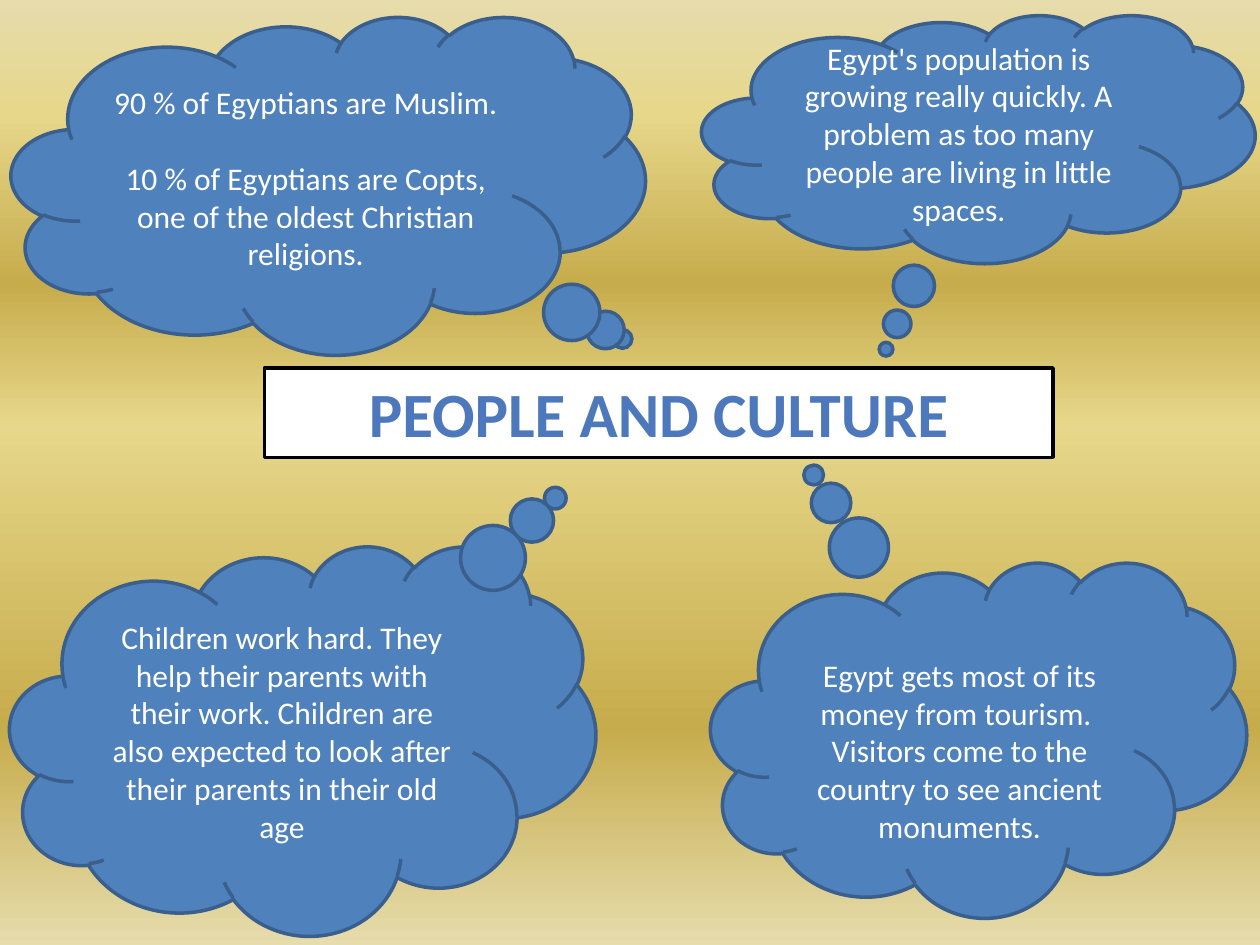
from lxml import etree
from pptx import Presentation
from pptx.dml.color import RGBColor
from pptx.enum.shapes import MSO_SHAPE
from pptx.enum.text import MSO_ANCHOR, MSO_AUTO_SIZE, PP_ALIGN
from pptx.oxml.ns import qn
from pptx.util import Cm, Pt

CLOUD = MSO_SHAPE.CLOUD_CALLOUT
RECTANGLE = MSO_SHAPE.RECTANGLE
MIDDLE = MSO_ANCHOR.MIDDLE
TOP = MSO_ANCHOR.TOP
GROW = MSO_AUTO_SIZE.SHAPE_TO_FIT_TEXT
FIXED = MSO_AUTO_SIZE.NONE
CENTER = PP_ALIGN.CENTER

BLUE = RGBColor(0x4F, 0x81, 0xBD)
DARK_BLUE = RGBColor(0x3A, 0x5F, 0x8C)
WHITE = RGBColor(0xFF, 0xFF, 0xFF)
BLACK = RGBColor(0x00, 0x00, 0x00)
PALE_SAND = RGBColor(0xE6, 0xDC, 0xAC)
SAND = RGBColor(0xE6, 0xD7, 0x8A)
GOLD = RGBColor(0xC7, 0xAC, 0x4C)

GOLD_STOPS = [(0, PALE_SAND), (12, SAND), (30, GOLD), (45, SAND), (77, GOLD), (100, PALE_SAND)]
TITLE_STOPS = [
    (0, RGBColor(0x74, 0x94, 0xC9)),
    (49, RGBColor(0x4D, 0x79, 0xBC)),
    (50, RGBColor(0x34, 0x6A, 0xAA)),
    (92, RGBColor(0x32, 0x5F, 0x94)),
    (100, RGBColor(0x31, 0x5D, 0x91)),
]

CLOUD_FONT = {"name": "Calibri", "size": Pt(18)}
TITLE_FONT = {"name": "Calibri", "size": Pt(36), "bold": True}
LINE_GAP = Pt(22)
LOWERED_INSET = Cm(0.89)

# box (left, top, width, height in cm), tail position, paragraphs, frame format, paragraph gap
CLOUDS = [
    ((14.33, 11.33, 10.8, 7.16), (-0.308, -0.745),
     ["Egypt gets most of its money from tourism. ",
      "Visitors come to the country to see ancient monuments."],
     {"margin_top": LOWERED_INSET}, Pt(0)),
    ((0.2, 11, 11.81, 7.85), (0.431, -0.622),
     ["Children work hard. They help their parents with their work. "
      "Children are also expected to look after their parents in their old age"],
     {}, Pt(0)),
    ((14.15, 0.3, 11.15, 5), (-0.167, 0.848),
     ["Egypt's population is growing really quickly. "
      "A problem as too many people are living in little spaces."],
     {}, Pt(0)),
    ((0.23, 0.33, 12.78, 6.81), (0.464, 0.455),
     ["90 % of Egyptians are Muslim. ",
      "10 % of Egyptians are Copts, one of the oldest Christian religions."],
     {}, LINE_GAP),
]


def set_format(target, values):
    for name, value in values.items():
        setattr(target, name, value)


def vertical_gradient(fill, parent, stops):
    """Give the fill, found inside the parent element, any number of stops."""
    fill.gradient()
    fill.gradient_angle = 270
    stop_list = parent.find(".//" + qn("a:gsLst"))
    for old_stop in list(stop_list):
        stop_list.remove(old_stop)
    for percent, color in stops:
        stop = etree.SubElement(stop_list, qn("a:gs"), pos=str(percent * 1000))
        etree.SubElement(stop, qn("a:srgbClr"), val=str(color))


class SlideBuilder:
    def __init__(self, slide):
        self.slide = slide
        self.line_width = Pt(2)

    def background(self, stops):
        vertical_gradient(self.slide.background.fill, self.slide.element, stops)

    def box(self, kind, box, fill_color, line_color, frame_format):
        shape = self.slide.shapes.add_shape(kind, *map(Cm, box))
        shape.shadow.inherit = False
        shape.fill.solid()
        shape.fill.fore_color.rgb = fill_color
        shape.line.color.rgb = line_color
        shape.line.width = self.line_width
        set_format(shape.text_frame, {"word_wrap": True, **frame_format})
        return shape

    def centered_run(self, paragraph, text, font_format):
        paragraph.alignment = CENTER
        run = paragraph.add_run()
        run.text = text
        set_format(run.font, font_format)
        return run

    def cloud(self, box, tail, texts, frame_format, gap):
        frame_format = {"vertical_anchor": MIDDLE, "auto_size": FIXED, **frame_format}
        shape = self.box(CLOUD, box, BLUE, DARK_BLUE, frame_format)
        for index, value in enumerate(tail):
            shape.adjustments[index] = value
        frame = shape.text_frame
        for index, text in enumerate(texts):
            paragraph = frame.add_paragraph() if index else frame.paragraphs[0]
            if index:
                paragraph.space_before = gap
            run = self.centered_run(paragraph, text, CLOUD_FONT)
            run.font.color.rgb = WHITE

    def title(self, box, text):
        shape = self.box(RECTANGLE, box, WHITE, BLACK,
                         {"vertical_anchor": TOP, "auto_size": GROW})
        paragraph = shape.text_frame.paragraphs[0]
        run = self.centered_run(paragraph, text, TITLE_FONT)
        vertical_gradient(run.font.fill, shape.element, TITLE_STOPS)


def main():
    presentation = Presentation()
    presentation.slide_width = Cm(25.4)
    presentation.slide_height = Cm(19.05)
    builder = SlideBuilder(presentation.slides.add_slide(presentation.slide_layouts[6]))
    builder.background(GOLD_STOPS)
    for cloud in CLOUDS:
        builder.cloud(*cloud)
    builder.title((5.33, 7.42, 15.9, 1.8), "PEOPLE AND CULTURE")
    presentation.save("out.pptx")


if __name__ == "__main__":
    main()
